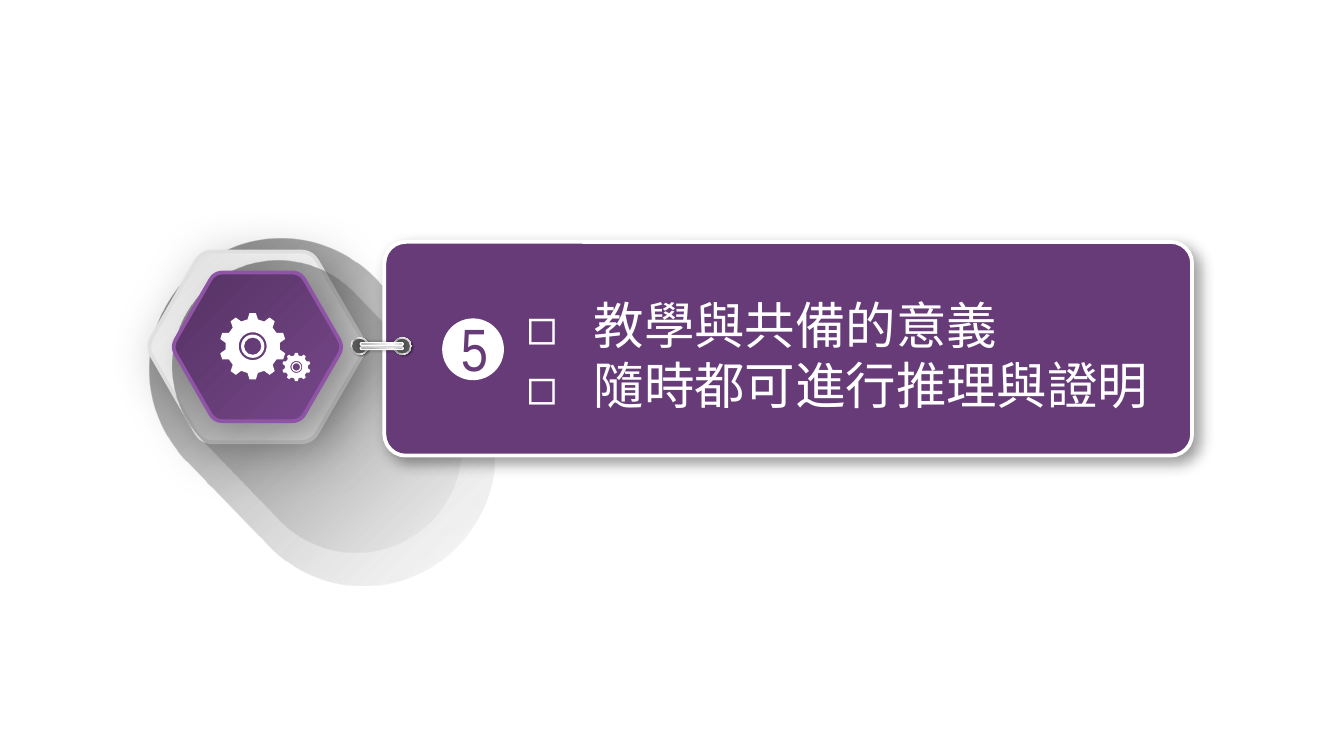
from dataclasses import dataclass
from math import cos, radians, sin, sqrt

from pptx import Presentation
from pptx.dml.color import RGBColor
from pptx.enum.shapes import MSO_SHAPE as SHAPE
from pptx.enum.text import MSO_AUTO_SIZE as FIT, PP_ALIGN as ALIGN
from pptx.oxml.ns import qn
from pptx.oxml.xmlchemy import OxmlElement
from pptx.util import Pt


@dataclass(frozen=True)
class Theme:
    purple: str = "663B77"
    purple_edge: str = "8F54A6"
    purple_grad: tuple = ((0, "77468A"), (100, "553363"))
    white: str = "FFFFFF"
    frame_edge: str = "E0E0E0"
    frame_grad: tuple = ((0, "FFFFFF"), (73, "ECECEC"), (100, "D9D9D9"))
    hole: str = "595959"
    black: str = "000000"
    cast_grad: tuple = ((0, "000000", 61), (37, "6C6C6C", 50), (100, "D8D8D8", 0))
    ring_grad: tuple = ((0, "FFFFFF"), (17, "A6A6A6"), (35, "F2F2F2"),
                        (55, "A6A6A6"), (75, "F2F2F2"), (100, "A6A6A6"))
    rod_grad: tuple = ((0, "808080"), (23, "A6A6A6"), (52, "D9D9D9"),
                       (74, "FFFFFF"), (100, "A6A6A6"))
    number_font: str = "Arial Narrow"
    list_font: str = "Noto Sans CJK SC"
    number_size: int = 32
    list_size: int = 27
    list_leading: int = 32


def element(parent, tag, **attrs):
    el = OxmlElement(tag)
    for name, value in attrs.items():
        el.set(name, str(value))
    parent.append(el)
    return el


def color_element(parent, color, alpha=100):
    clr = element(parent, "a:srgbClr", val=color)
    if alpha < 100:
        element(clr, "a:alpha", val=alpha * 1000)


def polar(cx, cy, radius, degrees):
    angle = radians(degrees)
    return cx + radius * cos(angle), cy + radius * sin(angle)


class Canvas:
    def __init__(self, slide, theme):
        self.shapes = slide.shapes
        self.theme = theme

    def style(self, sp, fill, line=None, shadow=None, angle=0, rotation=0):
        sp.rotation = rotation
        if isinstance(fill, str):
            sp.fill.solid()
            sp.fill.fore_color.rgb = RGBColor.from_string(fill)
        else:
            sp.fill.gradient()
            sp.fill.gradient_angle = (360 - angle) % 360
            stops = next(sp.element.iter(qn("a:gsLst")))
            for stop in list(stops):
                stops.remove(stop)
            for pos, *color in fill:
                color_element(element(stops, "a:gs", pos=pos * 1000), *color)
        if line:
            color, width = line
            sp.line.color.rgb = RGBColor.from_string(color)
            sp.line.width = Pt(width)
        else:
            sp.line.fill.background()
        sp.shadow.inherit = False
        if shadow:
            alpha, blur, dist, direction = shadow
            effects = sp.element.spPr.find(qn("a:effectLst"))
            outer = element(effects, "a:outerShdw", blurRad=Pt(blur), dist=Pt(dist),
                            dir=direction * 60000, algn="ctr", rotWithShape=0)
            color_element(outer, self.theme.black, alpha)
        return sp

    def preset(self, kind, x, y, w, h, fill, adjust=None, **look):
        sp = self.shapes.add_shape(kind, Pt(x), Pt(y), Pt(w), Pt(h))
        if adjust is not None:
            sp.adjustments[0] = adjust
        return self.style(sp, fill, **look)

    def centered(self, kind, cx, cy, w, h, fill, **look):
        return self.preset(kind, cx - w / 2, cy - h / 2, w, h, fill, **look)

    def outline(self, contours, fill, **look):
        contours = [[(Pt(x), Pt(y)) for x, y in pts] for pts in contours]
        first, *holes = contours
        builder = self.shapes.build_freeform(*first[0])
        builder.add_line_segments(first[1:], close=True)
        for pts in holes:
            builder.move_to(*pts[0])
            builder.add_line_segments(pts[1:], close=True)
        return self.style(builder.convert_to_shape(), fill, **look)

    def hexagon(self, cx, cy, radius, cut, fill, **look):
        corners = [polar(cx, cy, radius, 60 * i) for i in range(6)]
        pts = []
        for i, (x, y) in enumerate(corners):
            ends = [(x + (nx - x) * cut / radius, y + (ny - y) * cut / radius)
                    for nx, ny in (corners[i - 1], corners[(i + 1) % 6])]
            (ax, ay), (bx, by) = ends
            for t in (0, 0.2, 0.4, 0.6, 0.8, 1):
                u = 1 - t
                pts.append((u * u * ax + 2 * u * t * x + t * t * bx,
                            u * u * ay + 2 * u * t * y + t * t * by))
        return self.outline([pts], fill, **look)

    def gear(self, cx, cy, radius, teeth=10):
        step = 360 / teeth
        profile = ((-7, 0.82), (7, 0.82), (step / 2 - 5.5, 1), (step / 2 + 5.5, 1))
        rim = [polar(cx, cy, radius * r, step * i + a)
               for i in range(teeth) for a, r in profile]
        bore = [polar(cx, cy, radius * 0.42, -10 * i) for i in range(36)]
        self.outline([rim, bore], self.theme.white)
        self.centered(SHAPE.DONUT, cx, cy, radius * 0.7, radius * 0.7,
                      self.theme.white, adjust=0.13)

    def ring(self, cx, cy):
        self.centered(SHAPE.OVAL, cx, cy, 9.4, 9.4, self.theme.ring_grad,
                      angle=45, rotation=270, shadow=(40, 1, 1, 45))
        self.centered(SHAPE.OVAL, cx, cy, 7.9, 7.9, self.theme.hole, rotation=270)

    def rod(self, cx, cy):
        self.centered(SHAPE.ROUNDED_RECTANGLE, cx, cy, 1.4, 23, self.theme.rod_grad,
                      adjust=0.5, angle=90, rotation=270,
                      line=(self.theme.white, 0.75), shadow=(40, 2, 0, 0))

    def text(self, x, y, w, h, lines, font, size, color,
             align=ALIGN.LEFT, bullet=None, leading=None, top=3.6):
        sp = self.shapes.add_textbox(Pt(x), Pt(y), Pt(w), Pt(h))
        tf = sp.text_frame
        tf.word_wrap = True
        tf.auto_size = FIT.SHAPE_TO_FIT_TEXT
        tf.margin_top = Pt(top)
        for i, line in enumerate(lines):
            p = tf.paragraphs[0] if i == 0 else tf.add_paragraph()
            r = p.add_run()
            r.text = line
            p.alignment = align
            if leading:
                p.line_spacing = Pt(leading)
            if bullet:
                ppr = p._p.get_or_add_pPr()
                ppr.set("marL", str(Pt(36)))
                ppr.set("indent", str(Pt(-36)))
                element(ppr, "a:buFont", typeface=font)
                element(ppr, "a:buChar", char=bullet)
            p.font.name = font
            p.font.size = Pt(size)
            p.font.color.rgb = RGBColor.from_string(color)
            element(r._r.get_or_add_rPr(), "a:ea", typeface=font)


def main():
    prs = Presentation()
    prs.slide_width, prs.slide_height = Pt(720), Pt(405)
    th = Theme()
    s = Canvas(prs.slides.add_slide(prs.slide_layouts[6]), th)

    cast = dict(adjust=0.5, rotation=46)
    s.preset(SHAPE.ROUNDED_RECTANGLE, 70.6, 150.5, 203.8, 140.4, th.cast_grad, **cast)
    s.hexagon(137.5, 185.8, 59, 6, th.frame_grad, angle=45, rotation=180,
              line=(th.frame_edge, 2), shadow=(28, 28, 7, 45))
    s.preset(SHAPE.ROUNDED_RECTANGLE, 83.5, 161.3, 172.8, 113, th.cast_grad, **cast)
    s.hexagon(137.9, 185.8, 46, 4.6, th.purple_grad, angle=45, rotation=180,
              line=(th.purple_edge, 2), shadow=(25, 20, 9, 45))

    s.preset(SHAPE.ROUNDED_RECTANGLE, 205.9, 129.6, 432.7, 114.5, th.purple,
             adjust=0.1, line=(th.white, 2), shadow=(40, 8, 4, 45))
    for cx in (215.6, 192.6):
        s.ring(cx, 185.4)
    for cy in (186.5, 184.3):
        s.rod(204.5, cy)

    s.preset(SHAPE.OVAL, 236.9, 170.6, 33.1, 33.1, th.white)
    s.text(233.3, 163.4, 41.8, 46.1, ["5"], th.number_font, th.number_size,
           th.purple, align=ALIGN.CENTER)
    s.gear(158.8, 196.6, 7.6)
    s.gear(135.4, 185.5, 17.8)
    s.text(275, 151.2, 355, 72.7, ["教學與共備的意義", "隨時都可進行推理與證明"],
           th.list_font, th.list_size, th.white, bullet="◻",
           leading=th.list_leading, top=6.8)
    prs.save("out.pptx")


if __name__ == "__main__":
    main()
